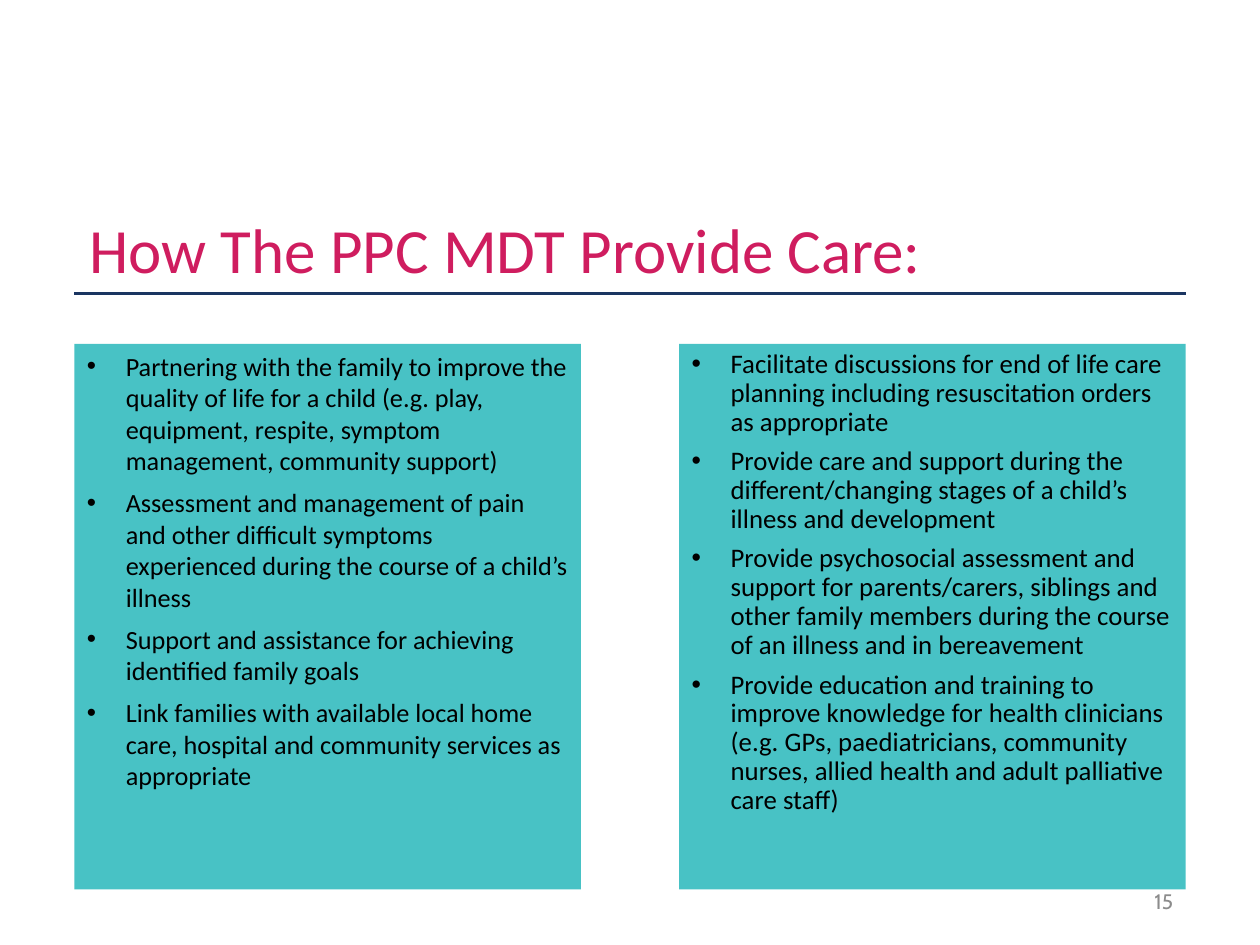
from lxml.etree import SubElement
from pptx import Presentation
from pptx.dml.color import RGBColor
from pptx.enum.shapes import MSO_CONNECTOR as Connector, MSO_SHAPE as Shape
from pptx.enum.text import MSO_ANCHOR as Anchor, PP_ALIGN as Align
from pptx.oxml.ns import qn
from pptx.util import Inches, Pt

WIDTH, HEIGHT = 10, 7.5
MARGIN = 0.59
CONTENT = WIDTH - 2 * MARGIN
PANEL_WIDTH = 4.02
PANEL_TOP, PANEL_HEIGHT = 2.73, 4.33
INDENT = 0.31

COLORS = {"title": "CF1D5F", "rule": "1A3561", "panel": "48C2C5",
          "text": "000000", "number": "8C8C8C"}

CARE_LEFT = [
    "Partnering with the family to improve the quality of life for a child "
    "(e.g. play, equipment, respite, symptom management, community support)",
    "Assessment and management of pain and other difficult symptoms "
    "experienced during the course of a child’s illness",
    "Support and assistance for achieving identified family goals",
    "Link families with available local home care, hospital and community "
    "services as appropriate",
]
CARE_RIGHT = [
    "Facilitate discussions for end of life care planning including "
    "resuscitation orders as appropriate",
    "Provide care and support during the different/changing stages of a "
    "child’s illness and development",
    "Provide psychosocial assessment and support for parents/carers, siblings "
    "and other family members during the course of an illness and in bereavement",
    "Provide education and training to improve knowledge for health clinicians "
    "(e.g. GPs, paediatricians, community nurses, allied health and adult "
    "palliative care staff)",
]


def color(name):
    return RGBColor.from_string(COLORS[name])


def add_bullet(para):
    props = para._p.get_or_add_pPr()
    props.set("marL", str(Inches(INDENT)))
    props.set("indent", str(-Inches(INDENT)))
    SubElement(props, qn("a:buFont"), typeface="Arial")
    SubElement(props, qn("a:buChar"), char="•")


def write(box, lines, size, ink="text", font="Calibri", anchor=Anchor.TOP,
          align=Align.LEFT, bullets=False, spacing=None, after=0, inset=0.1):
    """Fill a box with one paragraph per line."""
    frame = box.text_frame
    frame.word_wrap = True
    frame.vertical_anchor = anchor
    frame.margin_left = Inches(inset)
    for index, line in enumerate(lines):
        para = frame.paragraphs[0] if index == 0 else frame.add_paragraph()
        if bullets:
            add_bullet(para)
        para.alignment = align
        para.line_spacing = spacing
        para.space_after = Pt(after)
        span = para.add_run()
        span.text = line
        span.font.name = font
        span.font.size = Pt(size)
        span.font.color.rgb = color(ink)


def add_heading(page, text, left, top, width, height):
    """Place the title with a rule along its lower edge."""
    box = page.shapes.add_textbox(*map(Inches, (left, top, width, height)))
    write(box, [text], 36, ink="title", anchor=Anchor.MIDDLE, inset=0.12)
    base = top + height
    rule = page.shapes.add_connector(
        Connector.STRAIGHT, *map(Inches, (left, base, left + width, base)))
    rule.line.color.rgb = color("rule")
    rule.line.width = Pt(1.5)
    SubElement(rule._element.spPr, qn("a:effectLst"))


def add_panel(page, lines, left, top, width, height, size, spacing=None):
    panel = page.shapes.add_shape(
        Shape.RECTANGLE, *map(Inches, (left, top, width, height)))
    panel.shadow.inherit = False
    panel.fill.solid()
    panel.fill.fore_color.rgb = color("panel")
    panel.line.fill.background()
    write(panel, lines, size, bullets=True, spacing=spacing, after=6)


def add_page_number(page, number, left, top, width, height):
    box = page.shapes.add_textbox(*map(Inches, (left, top, width, height)))
    write(box, [str(number)], 12, ink="number", font="Cabin",
          anchor=Anchor.MIDDLE, align=Align.RIGHT)


def main():
    deck = Presentation()
    deck.slide_width, deck.slide_height = Inches(WIDTH), Inches(HEIGHT)
    page = deck.slides.add_slide(deck.slide_layouts[6])
    right = WIDTH - MARGIN

    add_heading(page, "How The PPC MDT Provide Care:", MARGIN, 1.61, CONTENT, 0.72)
    add_panel(page, CARE_LEFT, MARGIN, PANEL_TOP, PANEL_WIDTH, PANEL_HEIGHT, 15)
    add_panel(page, CARE_RIGHT, right - PANEL_WIDTH, PANEL_TOP, PANEL_WIDTH,
              PANEL_HEIGHT, 15.3, spacing=0.9)
    add_page_number(page, 15, right - 2.24, 6.95, 2.24, 0.4)
    deck.save("out.pptx")


if __name__ == "__main__":
    main()
